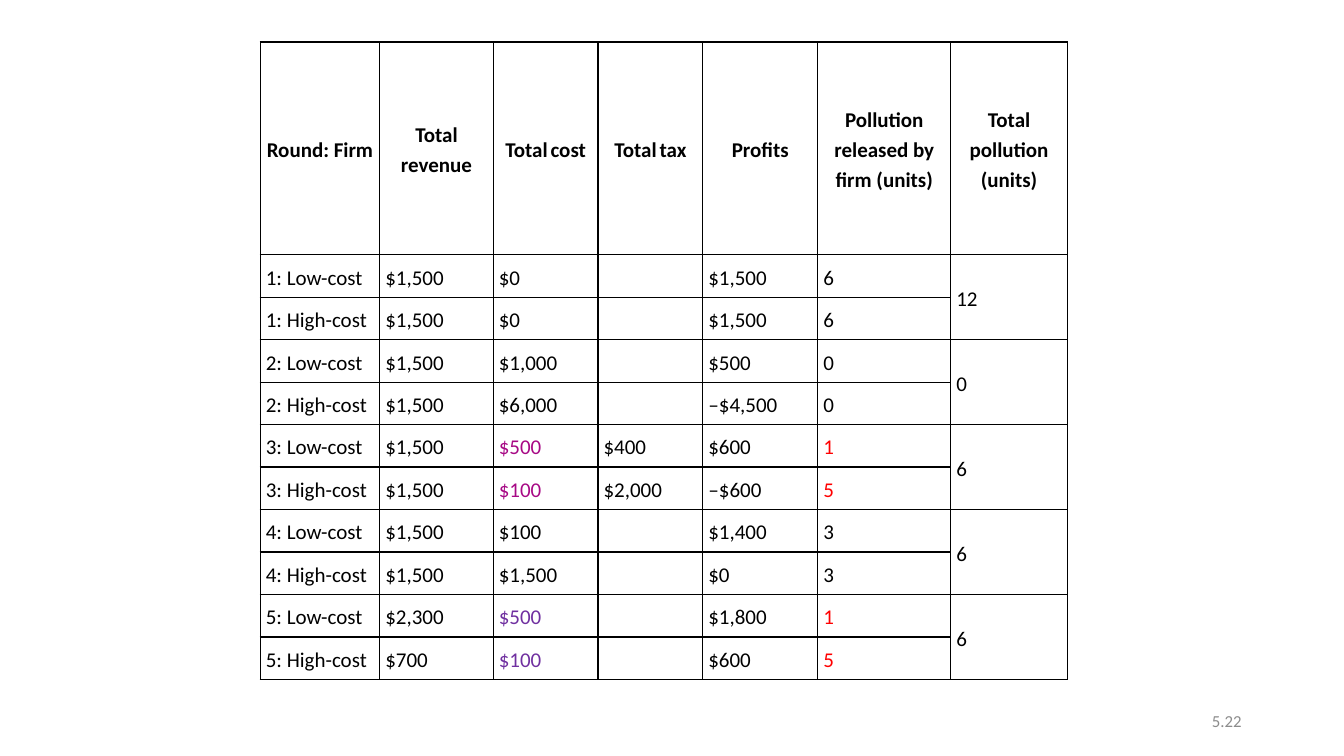
from lxml.etree import SubElement
from pptx import Presentation
from pptx.dml.color import RGBColor
from pptx.enum.text import MSO_ANCHOR, PP_ALIGN
from pptx.oxml import parse_xml
from pptx.oxml.ns import nsdecls, qn
from pptx.util import Cm, Pt

BLACK = RGBColor(0x00, 0x00, 0x00)
GREY = RGBColor(0x8C, 0x8C, 0x8C)
MAGENTA = RGBColor(0xA7, 0x09, 0x85)
PURPLE = RGBColor(0x70, 0x30, 0xA0)
RED = RGBColor(0xFF, 0x00, 0x00)

FONT = "Calibri"
TEXT_SIZE = 15
GAP_SIZE = 9  # narrow space between the words of a short heading

COLUMN_WIDTHS = [3.01, 2.86, 2.64, 2.64, 2.9, 3.35, 2.94]
HEADER_HEIGHT = 5.36
ROW_HEIGHT = 1.07

# Headings, as the runs they are made of
HEADINGS = [
    ["Round: Firm"],
    ["Total", " ", "revenue"],
    ["Total", " ", "cost"],
    ["Total", " ", "tax"],
    ["Profits"],
    ["Pollution released by firm (units)"],
    ["Total pollution (units)"],
]
# Firm, revenue, cost, tax, profits, pollution, total of the round
RESULTS = [
    ["1: Low-cost", "$1,500", "$0", "", "$1,500", "6", "12"],
    ["1: High-cost", "$1,500", "$0", "", "$1,500", "6", ""],
    ["2: Low-cost", "$1,500", "$1,000", "", "$500", "0", "0"],
    ["2: High-cost", "$1,500", "$6,000", "", "‒$4,500", "0", ""],
    ["3: Low-cost", "$1,500", "$500", "$400", "$600", "1", "6"],
    ["3: High-cost", "$1,500", "$100", "$2,000", "‒$600", "5", ""],
    ["4: Low-cost", "$1,500", "$100", "", "$1,400", "3", "6"],
    ["4: High-cost", "$1,500", "$1,500", "", "$0", "3", ""],
    ["5: Low-cost", "$2,300", "$500", "", "$1,800", "1", "6"],
    ["5: High-cost", "$700", "$100", "", "$600", "5", ""],
]
COST, POLLUTION, TOTAL = 2, 5, 6
# Colour of a value by round and column
HIGHLIGHTS = {
    ("3", COST): MAGENTA,
    ("5", COST): PURPLE,
    ("3", POLLUTION): RED,
    ("5", POLLUTION): RED,
}


def format_span(span, size, color, bold=False):
    span.font.name = FONT
    span.font.size = Pt(size)
    span.font.bold = bold
    span.font.color.rgb = color


def draw_borders(cell):
    properties = cell._tc.get_or_add_tcPr()
    for index, side in enumerate(("lnL", "lnR", "lnT", "lnB")):
        line = parse_xml(f'<a:{side} {nsdecls("a")} w="{Pt(1)}"/>')
        fill = SubElement(line, qn("a:solidFill"))
        SubElement(fill, qn("a:srgbClr"), val=str(BLACK))
        properties.insert(index, line)


def fill_cell(cell, words, align, color=BLACK, bold=False):
    cell.fill.background()
    draw_borders(cell)
    cell.vertical_anchor = MSO_ANCHOR.MIDDLE
    cell.margin_left = cell.margin_right = Cm(0.14)
    cell.margin_top = cell.margin_bottom = 0
    para = cell.text_frame.paragraphs[0]
    para.alignment = align
    para.line_spacing = 1.15
    para.space_after = Pt(10)
    for word in filter(None, words):
        span = para.add_run()
        span.text = word
        format_span(span, GAP_SIZE if word == " " else TEXT_SIZE, color, bold)


def add_results_table(page, left, top):
    height = HEADER_HEIGHT + ROW_HEIGHT * len(RESULTS)
    table = page.shapes.add_table(
        len(RESULTS) + 1, len(HEADINGS),
        Cm(left), Cm(top), Cm(sum(COLUMN_WIDTHS)), Cm(height),
    ).table
    table.first_row = table.horz_banding = False
    for column, width in zip(table.columns, COLUMN_WIDTHS):
        column.width = Cm(width)
    for index, row in enumerate(table.rows):
        row.height = Cm(ROW_HEIGHT if index else HEADER_HEIGHT)

    # Header row
    for column, words in enumerate(HEADINGS):
        fill_cell(table.cell(0, column), words, PP_ALIGN.CENTER, bold=True)

    # Two firms to a round
    for row, values in enumerate(RESULTS, start=1):
        for column, value in enumerate(values):
            color = HIGHLIGHTS.get((values[0][0], column), BLACK)
            fill_cell(table.cell(row, column), [value], PP_ALIGN.LEFT, color)

    # One pollution total to a round
    for row in range(1, len(RESULTS), 2):
        table.cell(row, TOTAL).merge(table.cell(row + 1, TOTAL))


def add_page_number(page, left, top, width, height):
    box = page.shapes.add_textbox(Cm(left), Cm(top), Cm(width), Cm(height))
    frame = box.text_frame
    frame.word_wrap = True
    frame.vertical_anchor = MSO_ANCHOR.MIDDLE
    frame.text = "5.22"
    para = frame.paragraphs[0]
    para.alignment = PP_ALIGN.RIGHT
    format_span(para.runs[0], 12, GREY)


def main():
    deck = Presentation()
    deck.slide_width, deck.slide_height = Cm(33.87), Cm(19.05)
    page = deck.slides.add_slide(deck.slide_layouts[6])
    add_results_table(page, 6.56, 1.06)
    add_page_number(page, 23.92, 17.66, 7.62, 1.01)
    deck.save("out.pptx")


if __name__ == "__main__":
    main()
